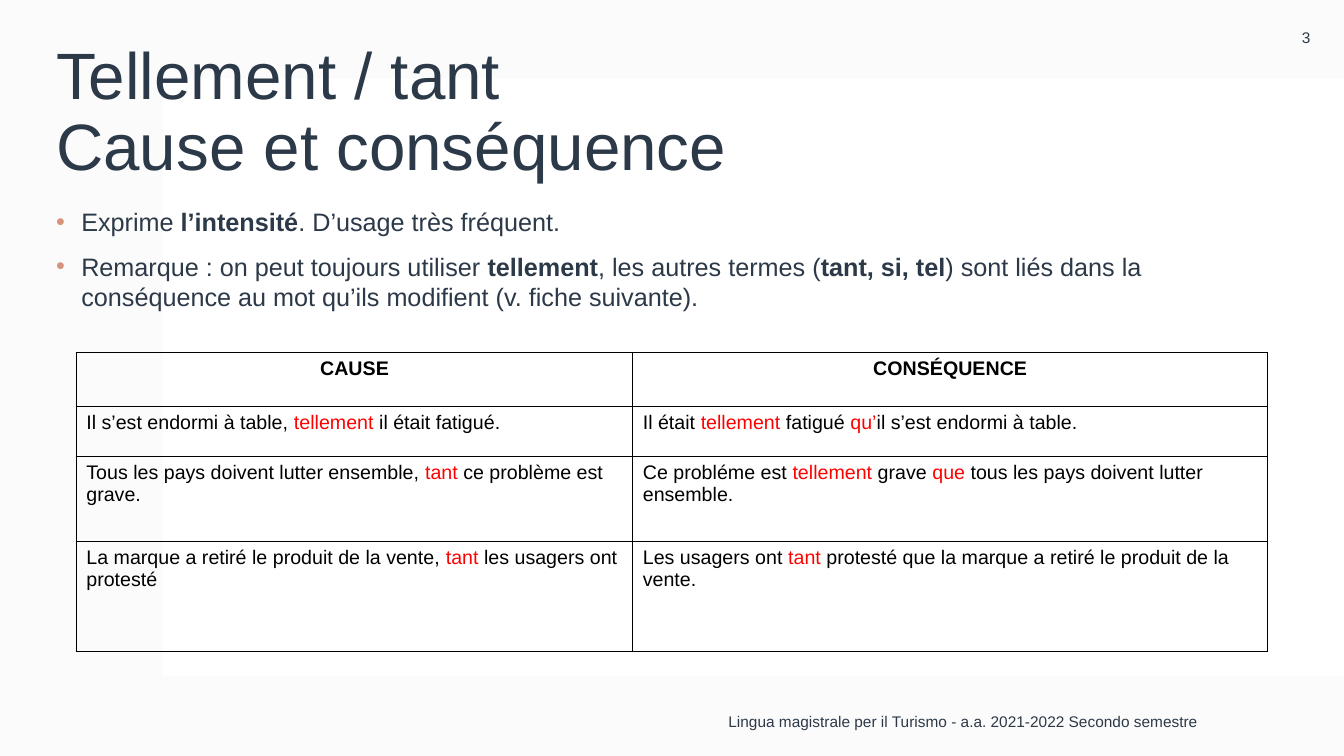
from lxml.etree import SubElement
from pptx import Presentation
from pptx.dml.color import RGBColor
from pptx.enum.shapes import MSO_SHAPE as Shape
from pptx.enum.text import MSO_ANCHOR as Anchor, PP_ALIGN as Align
from pptx.oxml.ns import qn
from pptx.util import Pt

COLORS = {"ink": "2C3948", "bullet": "D6947C", "veil": "F4F4F4",
          "panel": "FFFFFF", "black": "000000", "red": "FF0000"}
MARK = "*"  # encloses the emphasised words of a text

TITLE = "Tellement / tant \vCause et conséquence"
REMARKS = [
    "Exprime *l’intensité*. D’usage très fréquent.",
    "Remarque : on peut toujours utiliser *tellement*, les autres termes (*tant, si, tel*)"
    " sont liés dans la conséquence au mot qu’ils modifient (v. fiche suivante).",
]
EXAMPLES = [
    ("CAUSE", "CONSÉQUENCE"),
    ("Il s’est endormi à table, *tellement* il était fatigué.",
     "Il était *tellement* fatigué *qu’*il s’est endormi à table."),
    ("Tous les pays doivent lutter ensemble, *tant* ce problème est grave.",
     "Ce probléme est *tellement* grave *que* tous les pays doivent lutter ensemble."),
    ("La marque a retiré le produit de la vente, *tant* les usagers ont protesté",
     "Les usagers ont *tant* protesté que la marque a retiré le produit de la vente."),
]
COURSE = "Lingua magistrale per il Turismo - a.a. 2021-2022 Secondo semestre"


def rgb(name):
    return RGBColor.from_string(COLORS[name])


def apply(target, values):
    for key, value in values.items():
        setattr(target, key, value)


class SlideBuilder:
    font = "Arial"

    def __init__(self, slide):
        self.slide = slide

    def panel(self, box, color, opacity=100):
        panel = self.slide.shapes.add_shape(Shape.RECTANGLE, *map(Pt, box))
        panel.shadow.inherit = False
        panel.line.fill.background()
        panel.fill.solid()
        panel.fill.fore_color.rgb = rgb(color)
        if opacity < 100:
            tint = panel.fill._xPr.find(qn("a:solidFill"))[0]
            SubElement(tint, qn("a:alpha"), val=str(opacity * 1000))

    def paragraph(self, paragraph, text, size, color="ink", bold=False, accent=None, **layout):
        """Fill a paragraph; marked words turn bold, or take the accent colour."""
        apply(paragraph, layout)
        for index, part in enumerate(text.split(MARK)):
            marked = index % 2 == 1
            for number, line in enumerate(part.split("\v")):
                if number:
                    paragraph.add_line_break()
                run = paragraph.add_run()
                run.text = line
                apply(run.font, {"name": self.font, "size": Pt(size),
                                 "bold": bold or (marked and not accent)})
                run.font.color.rgb = rgb(accent if marked and accent else color)

    def text(self, box, lines, size, anchor=Anchor.MIDDLE, bulleted=False, **layout):
        frame = self.slide.shapes.add_textbox(*map(Pt, box)).text_frame
        apply(frame, {"word_wrap": True, "vertical_anchor": anchor})
        for index, line in enumerate(lines):
            paragraph = frame.add_paragraph() if index else frame.paragraphs[0]
            self.paragraph(paragraph, line, size, **layout)
            if bulleted:
                self.bullet(paragraph)

    def bullet(self, paragraph):
        props = paragraph._p.get_or_add_pPr()
        props.set("marL", str(Pt(18)))
        props.set("indent", str(-Pt(18)))
        SubElement(SubElement(props, qn("a:buClr")), qn("a:srgbClr"), val=COLORS["bullet"])
        SubElement(props, qn("a:buFont"), typeface=self.font)
        SubElement(props, qn("a:buChar"), char="•")

    def border(self, cell):
        props = cell._tc.get_or_add_tcPr()
        for side in ("lnL", "lnR", "lnT", "lnB"):
            edge = SubElement(props, qn(f"a:{side}"), w=str(Pt(1)))
            fill = SubElement(edge, qn("a:solidFill"))
            SubElement(fill, qn("a:srgbClr"), val=COLORS["black"])

    def table(self, left, top, widths, heights, rows, size):
        box = map(Pt, (left, top, sum(widths), sum(heights)))
        table = self.slide.shapes.add_table(len(rows), len(widths), *box).table
        apply(table, {"first_row": False, "horz_banding": False})
        for column, width in zip(table.columns, widths):
            column.width = Pt(width)
        for index, (row, height, texts) in enumerate(zip(table.rows, heights, rows)):
            row.height = Pt(height)
            heading = index == 0
            for cell, text in zip(row.cells, texts):
                self.border(cell)
                cell.fill.background()
                self.paragraph(cell.text_frame.paragraphs[0], text, size, "black", heading, "red",
                               alignment=Align.CENTER if heading else Align.LEFT)


def main():
    deck = Presentation()
    apply(deck, {"slide_width": Pt(960), "slide_height": Pt(540)})
    page = SlideBuilder(deck.slides.add_slide(deck.slide_layouts[6]))

    # Background
    page.panel((0, 0, 960, 540), "veil", opacity=35)
    page.panel((116.5, 56, 843.5, 427), "panel")

    # Title and remarks
    page.text((33, 29, 830, 104), [TITLE], 46.8, line_spacing=0.9)
    page.text((33, 144, 830, 331), REMARKS, 18, Anchor.TOP, bulleted=True, space_before=Pt(10))

    # Examples of cause and consequence
    page.table(54.5, 252, (397.5, 453.5), (38.5, 35.5, 61, 78.5), EXAMPLES, 14)

    # Footer and page number
    page.text((297, 490, 566, 50), [COURSE], 11, alignment=Align.RIGHT)
    page.text((906, 0, 54, 54), ["3"], 11, alignment=Align.CENTER)

    deck.save("out.pptx")


if __name__ == "__main__":
    main()
